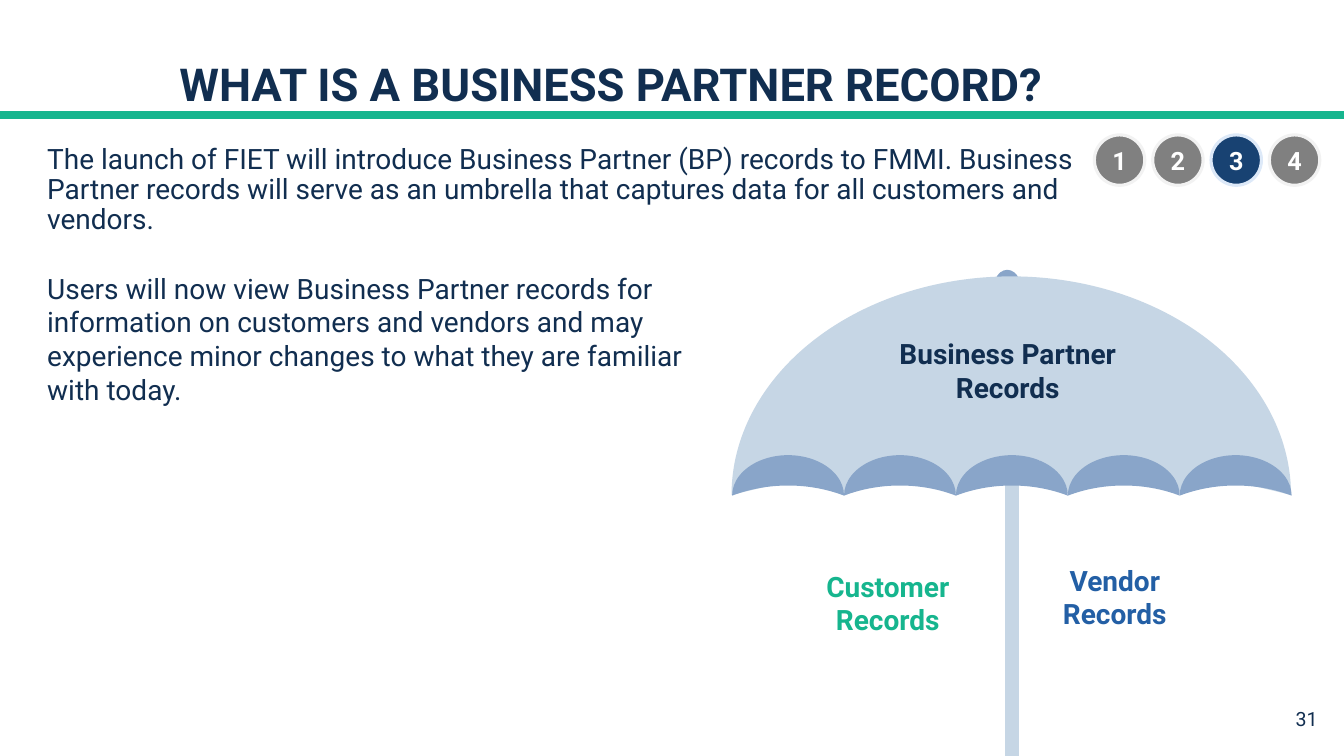
from lxml import etree
from pptx import Presentation
from pptx.dml.color import RGBColor
from pptx.enum.shapes import MSO_CONNECTOR, MSO_SHAPE
from pptx.enum.text import MSO_ANCHOR, PP_ALIGN
from pptx.oxml.ns import qn
from pptx.util import Cm, Pt

OVAL = MSO_SHAPE.OVAL
MOON = MSO_SHAPE.MOON
WEDGE = MSO_SHAPE.ISOSCELES_TRIANGLE
STRAIGHT = MSO_CONNECTOR.STRAIGHT
LEFT, MID, RIGHT = PP_ALIGN.LEFT, PP_ALIGN.CENTER, PP_ALIGN.RIGHT
TOP, CENTER, BOTTOM = MSO_ANCHOR.TOP, MSO_ANCHOR.MIDDLE, MSO_ANCHOR.BOTTOM

FONT = "Roboto"
COLORS = {
    "navy": "112E50",
    "green": "16B58E",
    "blue": "235FA5",
    "pale": "C6D6E5",
    "steel": "89A5C9",
    "gray": "808080",
    "ring": "F2F2F2",
    "active": "184272",
    "glow": "DDE9F8",
    "white": "FFFFFF",
}
PITCH = 2.82  # width of one scallop of the umbrella


def color(name):
    return RGBColor.from_string(COLORS[name])


def write(shape, text, size, tint, bold=False, align=LEFT, anchor=TOP, space=None):
    frame = shape.text_frame
    frame.word_wrap = True
    frame.vertical_anchor = anchor
    para = frame.paragraphs[0]
    para.text = text
    para.alignment = align
    if space:
        para.line_spacing = space
    font = para.font
    font.name, font.size, font.bold = FONT, Pt(size), bold
    font.color.rgb = color(tint)


def add_text(slide, box, text, size, tint, **style):
    shape = slide.shapes.add_textbox(*map(Cm, box))
    write(shape, text, size, tint, **style)


def add_shape(slide, kind, box, fill, turn=0, adjust=None):
    shape = slide.shapes.add_shape(kind, *map(Cm, box))
    shape.shadow.inherit = False
    shape.fill.solid()
    shape.fill.fore_color.rgb = color(fill)
    shape.line.fill.background()
    shape.rotation = turn
    if adjust is not None:
        shape.adjustments[0] = adjust
    return shape


def add_line(slide, start, end, tint, width):
    line = slide.shapes.add_connector(STRAIGHT, *map(Cm, start + end))
    line.line.color.rgb = color(tint)
    line.line.width = Pt(width)
    etree.SubElement(line._element.spPr, qn("a:effectLst"))


def add_umbrella(slide):
    add_shape(slide, OVAL, (25.04, 6.8, 0.69, 0.92), "steel")
    add_line(slide, (25.5, 11.05), (25.5, 19.05), "pale", 10)
    for i in range(4):
        add_shape(slide, WEDGE, (20.2 + i * PITCH, 11.17, 2.2, 1.3), "pale", 180)
    add_shape(slide, MOON, (22.73, 2.67, 5.51, 14.1), "pale", 90, 0.84)
    for i in range(5):
        add_shape(slide, MOON, (19.35 + i * PITCH, 10.57, 1.02, PITCH), "steel", 90, 0.75)

    labels = [
        ((21.92, 8.36, 6.96, 1.96), "Business Partner Records", "navy"),
        ((19.25, 14.22, 6.25, 1.96), "Customer Records", "green"),
        ((25.48, 14.07, 5.23, 1.96), "Vendor Records", "blue"),
    ]
    for box, text, tint in labels:
        add_text(slide, box, text, 20, tint, bold=True, align=MID)


def add_steps(slide, count, current):
    for step in range(1, count + 1):
        fill, ring = ("active", "glow") if step == current else ("gray", "ring")
        box = (27.58 + (step - 1) * 1.47, 3.4, 1.27, 1.27)
        dot = add_shape(slide, OVAL, box, fill)
        dot.line.color.rgb = color(ring)
        dot.line.width = Pt(2.25)
        frame = dot.text_frame
        frame.margin_left = frame.margin_right = 0
        write(dot, str(step), 18, "white", bold=True, align=MID, anchor=CENTER)


def add_title(slide, text):
    add_line(slide, (0, 2.9), (33.87, 2.9), "green", 6)
    add_text(slide, (4.27, 0.99, 25.27, 1.93), text, 32.4, "navy",
             bold=True, anchor=BOTTOM, space=0.9)


def main():
    deck = Presentation()
    deck.slide_width, deck.slide_height = Cm(33.87), Cm(19.05)
    slide = deck.slides.add_slide(deck.slide_layouts[6])

    add_title(slide, "WHAT IS A BUSINESS PARTNER RECORD?")
    add_text(slide, (0.94, 3.53, 26.64, 2.95),
             "The launch of FIET will introduce Business Partner (BP) records to FMMI. "
             "Business Partner records will serve as an umbrella that captures data "
             "for all customers and vendors.", 20, "navy", space=0.9)
    add_text(slide, (0.94, 6.71, 16.89, 4.78),
             "Users will now view Business Partner records for information on customers "
             "and vendors and may experience minor changes to what they are familiar "
             "with today.", 20, "navy")
    add_umbrella(slide)
    add_steps(slide, 4, current=3)
    add_text(slide, (31.83, 17.68, 1.63, 0.99), "31", 14, "navy", align=RIGHT)
    deck.save("out.pptx")


if __name__ == "__main__":
    main()
